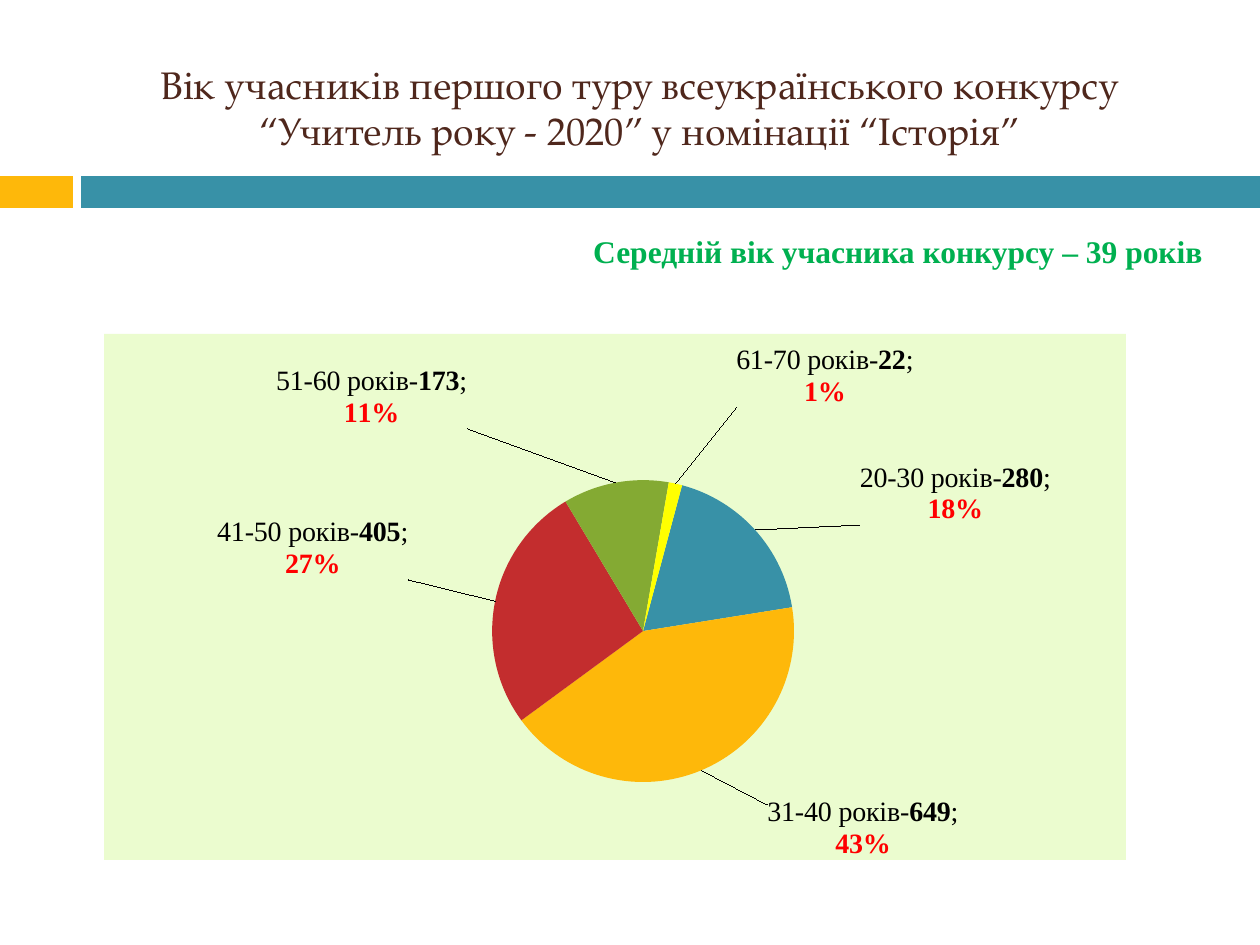
from lxml.etree import SubElement
from pptx import Presentation
from pptx.chart.data import CategoryChartData
from pptx.dml.color import RGBColor
from pptx.enum.chart import XL_CHART_TYPE, XL_LABEL_POSITION
from pptx.enum.shapes import MSO_SHAPE
from pptx.enum.text import MSO_ANCHOR, PP_ALIGN
from pptx.oxml import parse_xml
from pptx.oxml.ns import nsdecls, qn
from pptx.util import Pt

PIXELS_PER_INCH = 126
BLACK = RGBColor(0x00, 0x00, 0x00)
BROWN = RGBColor(0x4F, 0x27, 0x1C)
TEAL = RGBColor(0x38, 0x91, 0xA7)
AMBER = RGBColor(0xFE, 0xB8, 0x0A)
CRIMSON = RGBColor(0xC3, 0x2D, 0x2E)
OLIVE = RGBColor(0x84, 0xAA, 0x33)
YELLOW = RGBColor(0xFF, 0xFF, 0x00)
RED = RGBColor(0xFF, 0x00, 0x00)
GREEN = RGBColor(0x00, 0xB0, 0x50)
LIME = RGBColor(0xBB, 0xF6, 0x5C)
SERIF = "Times New Roman"

AGE_GROUPS = [
    ("20-30 років", 280, "18%", TEAL, (99, 0)),
    ("31-40 років", 649, "43%", AMBER, (63, 28)),
    ("41-50 років", 405, "27%", CRIMSON, (-80, -20)),
    ("51-60 років", 173, "11%", OLIVE, (-147, -47)),
    ("61-70 років", 22, "1%", YELLOW, (59, -69)),
]


def px(length):
    """Turn pixels into EMU."""
    return round(length * 914400 / PIXELS_PER_INCH)


def set_font(font, name, size, color, bold=False):
    """Set the face, size, colour and weight of a font."""
    font.name, font.size, font.bold = name, Pt(size), bold
    font.color.rgb = color


def add_text(slide, box, text, name, size, color, bold=False):
    """Add one centred paragraph in a box."""
    frame = slide.shapes.add_textbox(*map(px, box)).text_frame
    frame.word_wrap = True
    frame.vertical_anchor = MSO_ANCHOR.MIDDLE
    paragraph = frame.paragraphs[0]
    paragraph.text = text
    paragraph.alignment = PP_ALIGN.CENTER
    set_font(paragraph.font, name, size, color, bold)


def add_band(slide, box):
    """Draw the two-colour band with its narrow gap."""
    left, top, width, height = box
    accent, gap = 73, 8
    start = accent + gap
    for offset, length, color in ((0, accent, AMBER), (start, width - start, TEAL)):
        shape = slide.shapes.add_shape(
            MSO_SHAPE.RECTANGLE, px(left + offset), px(top), px(length), px(height))
        shape.shadow.inherit = False
        shape.fill.solid()
        shape.fill.fore_color.rgb = color
        shape.line.fill.background()


def add_layout(parent, index, **values):
    """Insert a manual chart layout into its parent."""
    for old in parent.findall(qn("c:layout")):
        parent.remove(old)
    layout = parse_xml(f"<c:layout {nsdecls('c')}><c:manualLayout/></c:layout>")
    for tag, value in values.items():
        SubElement(layout[0], qn(f"c:{tag}")).set("val", str(value))
    parent.insert(index, layout)


def fill_chart_area(chart):
    """Give the chart area a transparent lime fill without an outline."""
    properties = parse_xml(
        f"<c:spPr {nsdecls('c', 'a')}><a:solidFill><a:srgbClr val='{LIME}'>"
        "<a:alpha val='29000'/></a:srgbClr></a:solidFill>"
        "<a:ln><a:noFill/></a:ln></c:spPr>")
    chart._chartSpace.chart.addnext(properties)


def label_point(point, box, group):
    """Colour one slice and write its label at an offset from the rim."""
    category, value, share, color, (shift_x, shift_y) = group
    point.format.fill.solid()
    point.format.fill.fore_color.rgb = color
    label = point.data_label
    paragraph = label.text_frame.paragraphs[0]
    parts = ((f"{category}-", False, BLACK), (str(value), True, BLACK),
             ("; ", False, BLACK), (share, True, RED))
    for text, bold, text_color in parts:
        run = paragraph.add_run()
        run.text = text
        set_font(run.font, SERIF, 16, text_color, bold)
    label.position = XL_LABEL_POSITION.BEST_FIT
    add_layout(label._dLbl, 1, x=round(shift_x / box[2], 3), y=round(shift_y / box[3], 3))


def add_age_chart(slide, box):
    """Add the pie chart of age groups."""
    data = CategoryChartData()
    data.categories = [group[0] for group in AGE_GROUPS]
    data.add_series("Series 1", [group[1] for group in AGE_GROUPS])
    chart = slide.shapes.add_chart(XL_CHART_TYPE.PIE, *map(px, box), data).chart
    chart.has_title = chart.has_legend = False
    set_font(chart.font, "Calibri", 10, BLACK)
    fill_chart_area(chart)
    plot = chart.plots[0]
    plot.vary_by_categories = True
    add_layout(chart._chartSpace.chart.plotArea, 0, layoutTarget="inner",
               xMode="edge", yMode="edge", x=0.229, y=0.278, w=0.597, h=0.574)
    angle = plot._element.find(qn("c:firstSliceAng"))
    if angle is None:
        angle = SubElement(plot._element, qn("c:firstSliceAng"))
    angle.set("val", "15")
    series = plot.series[0]
    for index, group in enumerate(AGE_GROUPS):
        label_point(series.points[index], box, group)
    labels = series.data_labels
    labels.show_value = labels.show_percentage = labels.show_category_name = True
    set_font(labels.font, SERIF, 16, BLACK)


def main():
    """Build the slide and save it."""
    presentation = Presentation()
    presentation.slide_width, presentation.slide_height = px(1260), px(945)
    slide = presentation.slides.add_slide(presentation.slide_layouts[6])
    add_band(slide, (0, 176, 1260, 32))
    add_text(slide, (78, 39, 1124, 136),
             "Вік учасників першого туру всеукраїнського конкурсу "
             "“Учитель року - 2020” у номінації “Історія”",
             "TeX Gyre Pagella", 22, BROWN)
    add_age_chart(slide, (104, 334, 1022, 526))
    add_text(slide, (561, 225, 674, 51),
             "Середній вік учасника конкурсу – 39 років", SERIF, 18, GREEN, True)
    presentation.save("out.pptx")


if __name__ == "__main__":
    main()
